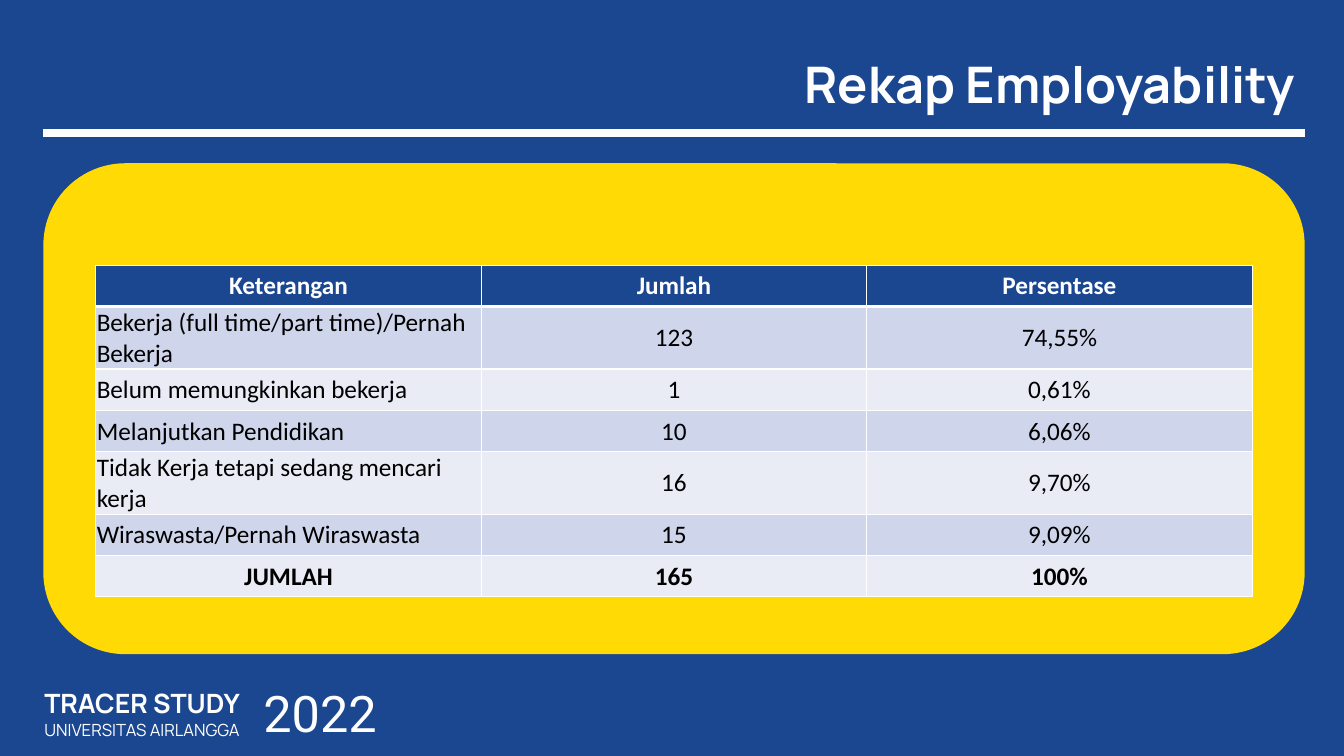
from dataclasses import dataclass

from lxml.etree import SubElement
from pptx import Presentation
from pptx.dml.color import RGBColor
from pptx.enum.shapes import MSO_CONNECTOR, MSO_SHAPE
from pptx.enum.text import MSO_ANCHOR, MSO_AUTO_SIZE, PP_ALIGN
from pptx.oxml.ns import qn
from pptx.util import Inches, Pt


@dataclass(frozen=True)
class Theme:
    blue: str = "1B4690"
    yellow: str = "FFDA05"
    white: str = "FFFFFF"
    black: str = "000000"
    bands: tuple = ("CFD5EA", "E9EBF5")
    brand_font: str = "Manrope"
    year_font: str = "Roboto"
    table_font: str = "Calibri"
    heading_size: int = 36
    study_size: int = 19
    table_size: int = 18
    campus_size: int = 12
    rule_width: int = 6
    border_width: int = 1
    header_border_width: int = 3


THEME = Theme()

RECAP = [
    ("Keterangan", "Jumlah", "Persentase"),
    ("Bekerja (full time/part time)/Pernah Bekerja", "123", "74,55%"),
    ("Belum memungkinkan bekerja", "1", "0,61%"),
    ("Melanjutkan Pendidikan", "10", "6,06%"),
    ("Tidak Kerja tetapi sedang mencari kerja", "16", "9,70%"),
    ("Wiraswasta/Pernah Wiraswasta", "15", "9,09%"),
    ("JUMLAH", "165", "100%"),
]


def color(code):
    return RGBColor.from_string(code)


def write(paragraph, text, font, size, ink, bold=False, align=PP_ALIGN.CENTER):
    paragraph.text = text
    paragraph.alignment = align
    for run in paragraph.runs:
        run.font.name = font
        run.font.size = Pt(size)
        run.font.bold = bold
        run.font.color.rgb = color(ink)


def add_heading(slide, left, top, width, height):
    heading = slide.shapes.add_textbox(
        Inches(left), Inches(top), Inches(width), Inches(height)
    )
    frame = heading.text_frame
    frame.word_wrap = True
    frame.vertical_anchor = MSO_ANCHOR.MIDDLE
    title = frame.paragraphs[0]
    write(title, "Rekap Employability", THEME.brand_font, THEME.heading_size,
          THEME.white, True, PP_ALIGN.RIGHT)
    title.line_spacing = 0.9

    bottom = Inches(top + height)
    rule = slide.shapes.add_connector(
        MSO_CONNECTOR.STRAIGHT, Inches(left), bottom, Inches(left + width), bottom
    )
    rule.line.color.rgb = color(THEME.white)
    rule.line.width = Pt(THEME.rule_width)
    SubElement(rule._element.spPr, qn("a:effectLst"))


def add_footer_text(slide, left, top, width, height, lines):
    box = slide.shapes.add_textbox(
        Inches(left), Inches(top), Inches(width), Inches(height)
    )
    frame = box.text_frame
    frame.word_wrap = False
    frame.auto_size = MSO_AUTO_SIZE.SHAPE_TO_FIT_TEXT
    for index, (text, font, size, bold) in enumerate(lines):
        paragraph = frame.add_paragraph() if index else frame.paragraphs[0]
        write(paragraph, text, font, size, THEME.white, bold)


def add_footer(slide, left, top):
    add_footer_text(slide, left, top + 0.05, 2.2, 0.62, [
        ("TRACER STUDY", THEME.brand_font, THEME.study_size, True),
        ("UNIVERSITAS AIRLANGGA", THEME.brand_font, THEME.campus_size, False),
    ])
    add_footer_text(slide, left + 2.08, top, 1.57, 0.71, [
        ("2022", THEME.year_font, THEME.heading_size, False),
    ])


def add_border(cell, side, width):
    border = SubElement(cell._tc.get_or_add_tcPr(), qn(f"a:ln{side}"), w=str(Pt(width)))
    fill = SubElement(border, qn("a:solidFill"))
    SubElement(fill, qn("a:srgbClr"), val=THEME.white)


def style_cell(cell, text, row, column):
    header = row == 0
    total = row == len(RECAP) - 1
    cell.margin_left = cell.margin_right = cell.margin_top = Inches(0.01)
    cell.margin_bottom = 0
    cell.vertical_anchor = MSO_ANCHOR.MIDDLE
    for side in "LRTB":
        thick = (header and side == "B") or (row == 1 and side == "T")
        add_border(cell, side, THEME.header_border_width if thick else THEME.border_width)
    cell.fill.solid()
    cell.fill.fore_color.rgb = color(THEME.blue if header else THEME.bands[(row - 1) % 2])
    label = column == 0 and not header and not total
    write(cell.text_frame.paragraphs[0], text, THEME.table_font, THEME.table_size,
          THEME.white if header else THEME.black, header or total,
          PP_ALIGN.LEFT if label else PP_ALIGN.CENTER)


def add_recap_panel(slide, left, top, width, height):
    panel = slide.shapes.add_shape(
        MSO_SHAPE.ROUNDED_RECTANGLE,
        Inches(left), Inches(top), Inches(width), Inches(height),
    )
    panel.shadow.inherit = False
    panel.fill.solid()
    panel.fill.fore_color.rgb = color(THEME.yellow)
    panel.line.fill.background()

    inset = 0.52
    row_height = 0.41
    recap = slide.shapes.add_table(
        len(RECAP), len(RECAP[0]), Inches(left + inset), Inches(top + 1.01),
        Inches(width - 2 * inset), Inches(row_height * len(RECAP)),
    ).table
    for row, entries in enumerate(RECAP):
        recap.rows[row].height = Inches(row_height)
        for column, text in enumerate(entries):
            style_cell(recap.cell(row, column), text, row, column)


def main():
    presentation = Presentation()
    presentation.slide_width = Inches(13.33)
    presentation.slide_height = Inches(7.5)
    slide = presentation.slides.add_slide(presentation.slide_layouts[6])
    slide.background.fill.solid()
    slide.background.fill.fore_color.rgb = color(THEME.blue)
    add_recap_panel(slide, 0.43, 1.62, 12.51, 4.87)
    add_heading(slide, 0.43, 0.41, 12.51, 0.91)
    add_footer(slide, 0.31, 6.72)
    presentation.save("out.pptx")


if __name__ == "__main__":
    main()
